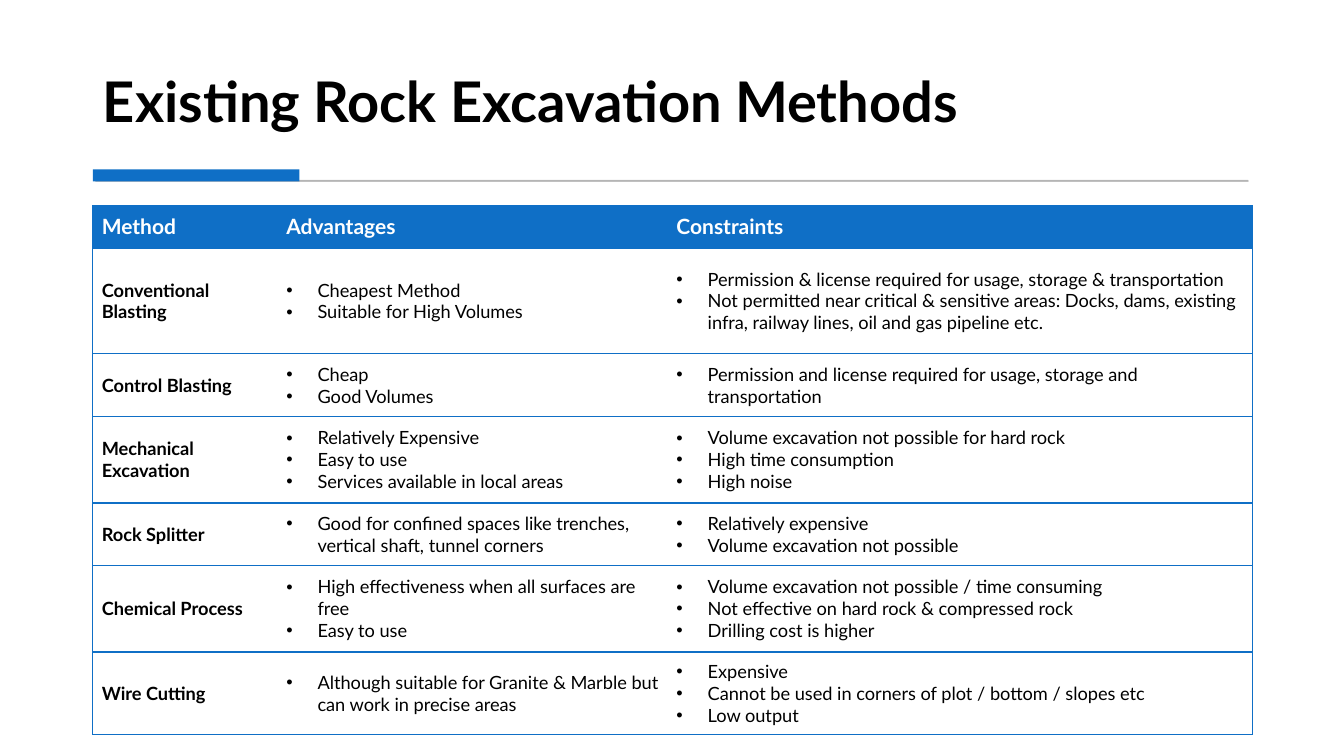
from lxml import etree
from pptx import Presentation
from pptx.dml.color import RGBColor
from pptx.enum.shapes import MSO_SHAPE
from pptx.enum.text import MSO_ANCHOR, PP_ALIGN
from pptx.oxml.ns import qn
from pptx.util import Inches, Pt

RECTANGLE = MSO_SHAPE.RECTANGLE
MIDDLE, BOTTOM = MSO_ANCHOR.MIDDLE, MSO_ANCHOR.BOTTOM
LEFT = PP_ALIGN.LEFT

BLUE, GREY, BLACK, WHITE = "0F6FC6", "595959", "000000", "FFFFFF"
COLUMN_WIDTHS = [1.83, 3.87, 5.8]
ROW_HEIGHTS = [0.42, 1.05, 0.62, 0.86, 0.62, 0.86, 0.82]
HEADINGS = ["Method", "Advantages", "Constraints"]
METHODS = [
    ("Conventional Blasting",
     ["Cheapest Method", "Suitable for High Volumes"],
     ["Permission & license required for usage, storage & transportation",
      "Not permitted near critical & sensitive areas: Docks, dams, existing "
      "infra, railway lines, oil and gas pipeline etc."]),
    ("Control Blasting",
     ["Cheap", "Good Volumes"],
     ["Permission and license required for usage, storage and transportation"]),
    ("Mechanical Excavation",
     ["Relatively Expensive", "Easy to use", "Services available in local areas"],
     ["Volume excavation not possible for hard rock", "High time consumption", "High noise"]),
    ("Rock Splitter",
     ["Good for confined spaces like trenches, vertical shaft, tunnel corners"],
     ["Relatively expensive", "Volume excavation not possible"]),
    ("Chemical Process",
     ["High effectiveness when all surfaces are free", "Easy to use"],
     ["Volume excavation not possible / time consuming",
      "Not effective on hard rock & compressed rock", "Drilling cost is higher"]),
    ("Wire Cutting",
     ["Although suitable for Granite & Marble but can work in precise areas"],
     ["Expensive", "Cannot be used in corners of plot / bottom / slopes etc", "Low output"]),
]


def color(hex_code):
    return RGBColor.from_string(hex_code)


def write(frame, lines, size=13, ink=BLACK, bold=False, bullet=False, spacing=None):
    """Fill a text frame with one paragraph per line."""
    for index, line in enumerate(lines):
        paragraph = frame.paragraphs[0] if index == 0 else frame.add_paragraph()
        paragraph.alignment = LEFT
        if spacing:
            paragraph.line_spacing = spacing
        run = paragraph.add_run()
        run.text = line
        run.font.name = "Lato"
        run.font.size = Pt(size)
        run.font.bold = bold
        run.font.color.rgb = color(ink)
        if bullet:
            properties = paragraph._p.get_or_add_pPr()
            properties.set("marL", str(Inches(0.31)))
            properties.set("indent", str(Inches(-0.31)))
            etree.SubElement(properties, qn("a:buFont"), typeface="Arial")
            etree.SubElement(properties, qn("a:buChar"), char="•")


class Deck:
    """Holds the presentation, its style and the current slide."""

    def __init__(self):
        self.presentation = Presentation()
        self.presentation.slide_width = Inches(13.33)
        self.presentation.slide_height = Inches(7.5)
        self.slide = self.presentation.slides.add_slide(self.presentation.slide_layouts[5])

    def title(self, text, left, top, width, height):
        heading = self.slide.shapes.title
        heading.left, heading.top = Inches(left), Inches(top)
        heading.width, heading.height = Inches(width), Inches(height)
        heading.text_frame.word_wrap = True
        heading.text_frame.vertical_anchor = BOTTOM
        write(heading.text_frame, [text], size=40, bold=True, spacing=0.9)

    def bar(self, left, top, width, height, fill, opacity=None):
        bar = self.slide.shapes.add_shape(
            RECTANGLE, Inches(left), Inches(top), Inches(width), Inches(height))
        bar.shadow.inherit = False
        bar.fill.solid()
        bar.fill.fore_color.rgb = color(fill)
        if opacity is None:
            bar.line.fill.background()
            return
        bar.line.width = Pt(0.75)
        bar.line.color.rgb = color(fill)
        for tint in bar._element.spPr.iter(qn("a:srgbClr")):
            etree.SubElement(tint, qn("a:alpha"), val=str(opacity * 1000))

    def table(self, left, top, widths, heights):
        frame = self.slide.shapes.add_table(
            len(heights), len(widths), Inches(left), Inches(top),
            Inches(sum(widths)), Inches(sum(heights)))
        for column, width in zip(frame.table.columns, widths):
            column.width = Inches(width)
        for row, height in zip(frame.table.rows, heights):
            row.height = Inches(height)
        return frame.table

    def cell(self, cell, lines, fill, outlined, **style):
        cell.vertical_anchor = MIDDLE
        cell.margin_left = cell.margin_right = Inches(0.09)
        cell.margin_top = cell.margin_bottom = Inches(0.05)
        properties = cell._tc.get_or_add_tcPr()
        for side in "LRTB":
            border = etree.SubElement(properties, qn(f"a:ln{side}"), w=str(Pt(1)))
            if side in outlined:
                paint = etree.SubElement(border, qn("a:solidFill"))
                etree.SubElement(paint, qn("a:srgbClr"), val=BLUE)
            else:
                etree.SubElement(border, qn("a:noFill"))
        cell.fill.solid()
        cell.fill.fore_color.rgb = color(fill)
        write(cell.text_frame, lines, **style)


def main():
    deck = Deck()

    # Title and divider
    deck.title("Existing Rock Excavation Methods", 0.92, 0.28, 11.49, 1.11)
    deck.bar(0.95, 1.79, 11.43, 0.01, GREY, opacity=30)
    deck.bar(0.92, 1.68, 2.05, 0.12, BLUE)

    # Comparison table, ruled outside and between rows only
    comparison = deck.table(0.92, 2.04, COLUMN_WIDTHS, ROW_HEIGHTS)
    outlines = ["LTB", "TB", "RTB"]
    for column, heading in enumerate(HEADINGS):
        deck.cell(comparison.cell(0, column), [heading], BLUE, outlines[column],
                  size=15, ink=WHITE, bold=True)
    for row, (method, advantages, constraints) in enumerate(METHODS, start=1):
        for column, lines in enumerate([[method], advantages, constraints]):
            deck.cell(comparison.cell(row, column), lines, WHITE, outlines[column],
                      bold=column == 0, bullet=column > 0)

    deck.presentation.save("out.pptx")


if __name__ == "__main__":
    main()
